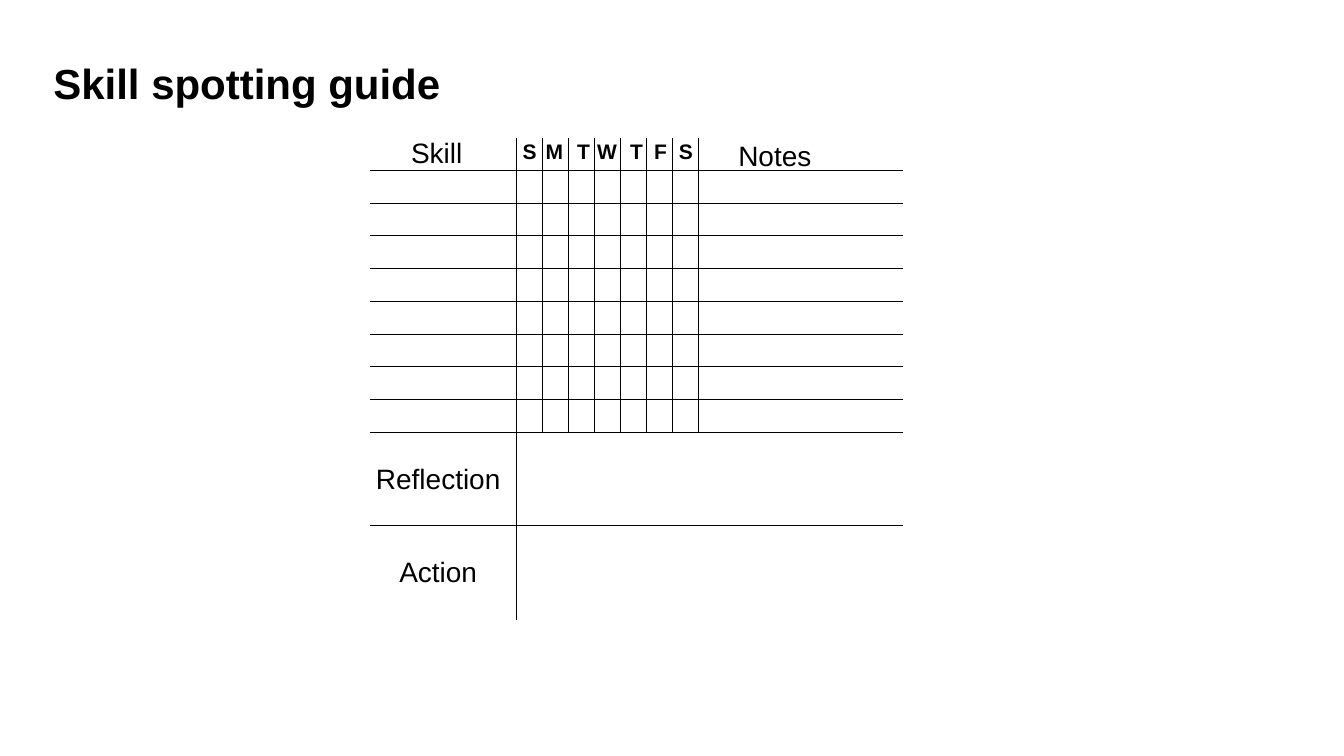
from pptx import Presentation
from pptx.dml.color import RGBColor
from pptx.enum.shapes import MSO_CONNECTOR
from pptx.enum.text import MSO_ANCHOR, PP_ALIGN
from pptx.oxml.ns import qn
from pptx.util import Inches, Pt
from lxml import etree

STRAIGHT = MSO_CONNECTOR.STRAIGHT
MIDDLE, TOP = MSO_ANCHOR.MIDDLE, MSO_ANCHOR.TOP
LEFT, CENTER = PP_ALIGN.LEFT, PP_ALIGN.CENTER
COLORS = {"ink": "000000", "paper": "FFFFFF"}
FONT = "Arial"

GRID_LEFT, GRID_RIGHT = 7.34, 17.92
GRID_TOP, GRID_END = 2.74, 12.3
DAY_LEFT, DAY_STEP = 10.24, 0.5175
ROW_TOP, ROW_STEP, ROWS = 3.38, 0.6485, 8
ROW_END = ROW_TOP + ROWS * ROW_STEP
SPLIT = 10.43

LABELS = [
    ("Skill", 7.31, 2.63),
    ("Reflection", 7.34, 9.1),
    ("Action", 7.34, 10.96),
    ("Notes", 14.02, 2.7),
]
DAYS = [
    ("S", 10.23), ("M", 10.72), ("T", 11.3), ("W", 11.75),
    ("T", 12.35), ("F", 12.83), ("S", 13.33),
]


def add_line(slide, x1, y1, x2, y2):
    line = slide.shapes.add_connector(
        STRAIGHT, Inches(x1), Inches(y1), Inches(x2), Inches(y2))
    line.line.color.rgb = RGBColor.from_string(COLORS["ink"])
    line.line.width = Pt(0.75)
    etree.SubElement(line._element.spPr, qn("a:effectLst"))


def add_text(slide, text, x, y, w, h, size, bold=False, align=CENTER):
    box = slide.shapes.add_textbox(Inches(x), Inches(y), Inches(w), Inches(h))
    frame = box.text_frame
    frame.word_wrap = True
    frame.vertical_anchor = TOP
    para = frame.paragraphs[0]
    para.text = text
    para.alignment = align
    para.font.name = FONT
    para.font.size = Pt(size)
    para.font.bold = bold
    para.font.color.rgb = RGBColor.from_string(COLORS["ink"])
    return frame


def add_title(slide, text):
    frame = add_text(slide, text, 1.06, 1.11, 24.56, 1.06, 60, True, LEFT)
    frame.vertical_anchor = MIDDLE
    frame.margin_left = frame.margin_right = 0
    frame.margin_top = frame.margin_bottom = 0


def add_grid(slide):
    rows = [ROW_TOP + i * ROW_STEP for i in range(ROWS + 1)]
    for y in rows + [SPLIT]:
        add_line(slide, GRID_LEFT, y, GRID_RIGHT, y)
    for i in range(len(DAYS) + 1):
        x = DAY_LEFT + i * DAY_STEP
        add_line(slide, x, GRID_TOP, x, ROW_END if i else GRID_END)


def main():
    deck = Presentation()
    deck.slide_width = Inches(26.67)
    deck.slide_height = Inches(15)
    slide = deck.slides.add_slide(deck.slide_layouts[6])
    fill = slide.background.fill
    fill.solid()
    fill.fore_color.rgb = RGBColor.from_string(COLORS["paper"])

    add_title(slide, "Skill spotting guide")
    add_grid(slide)
    for text, x, y in LABELS:
        add_text(slide, text, x, y, 2.71, 0.77, 40)
    for text, x in DAYS:
        add_text(slide, text, x, 2.7, 0.56, 0.63, 30, True)
    deck.save("out.pptx")


if __name__ == "__main__":
    main()
